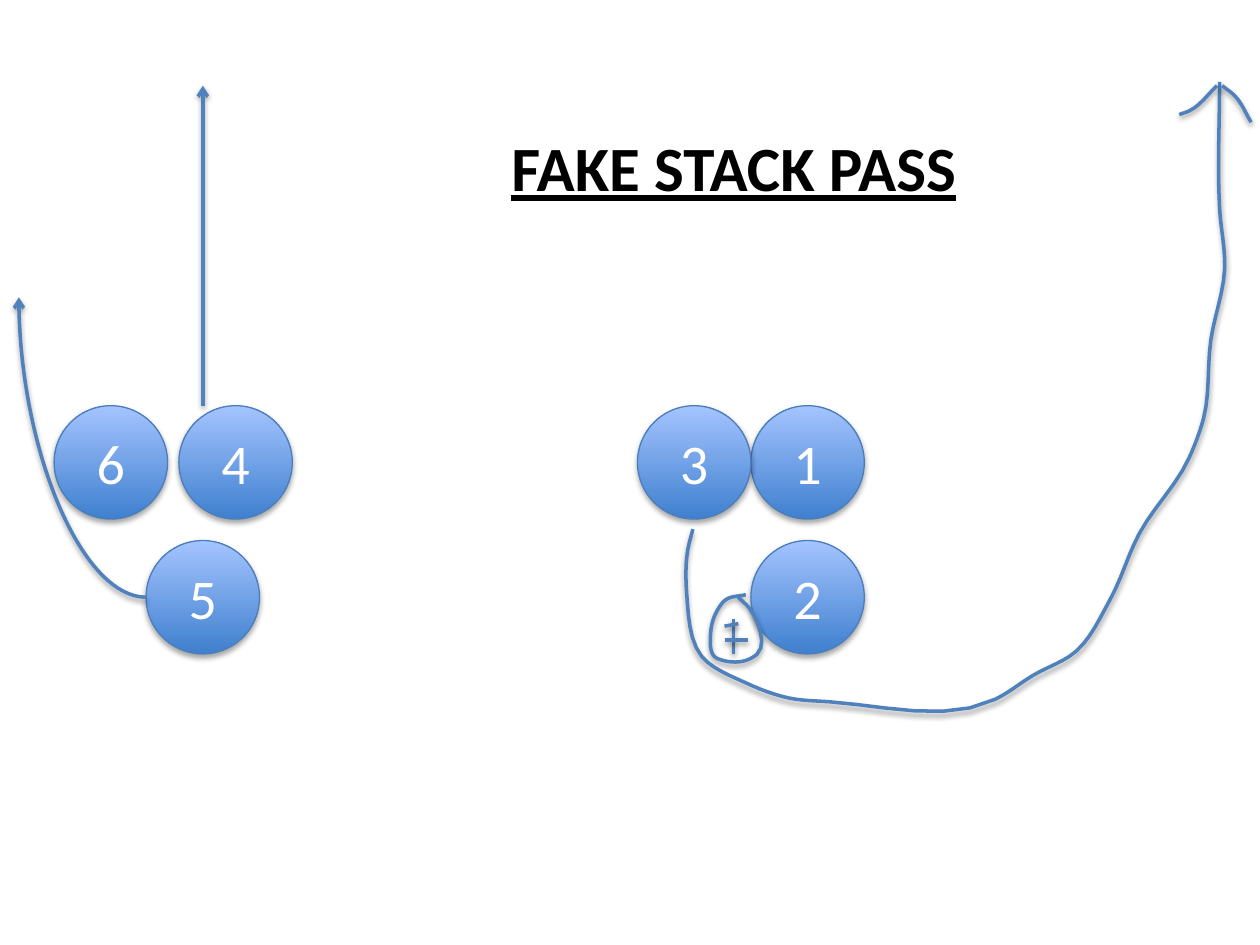
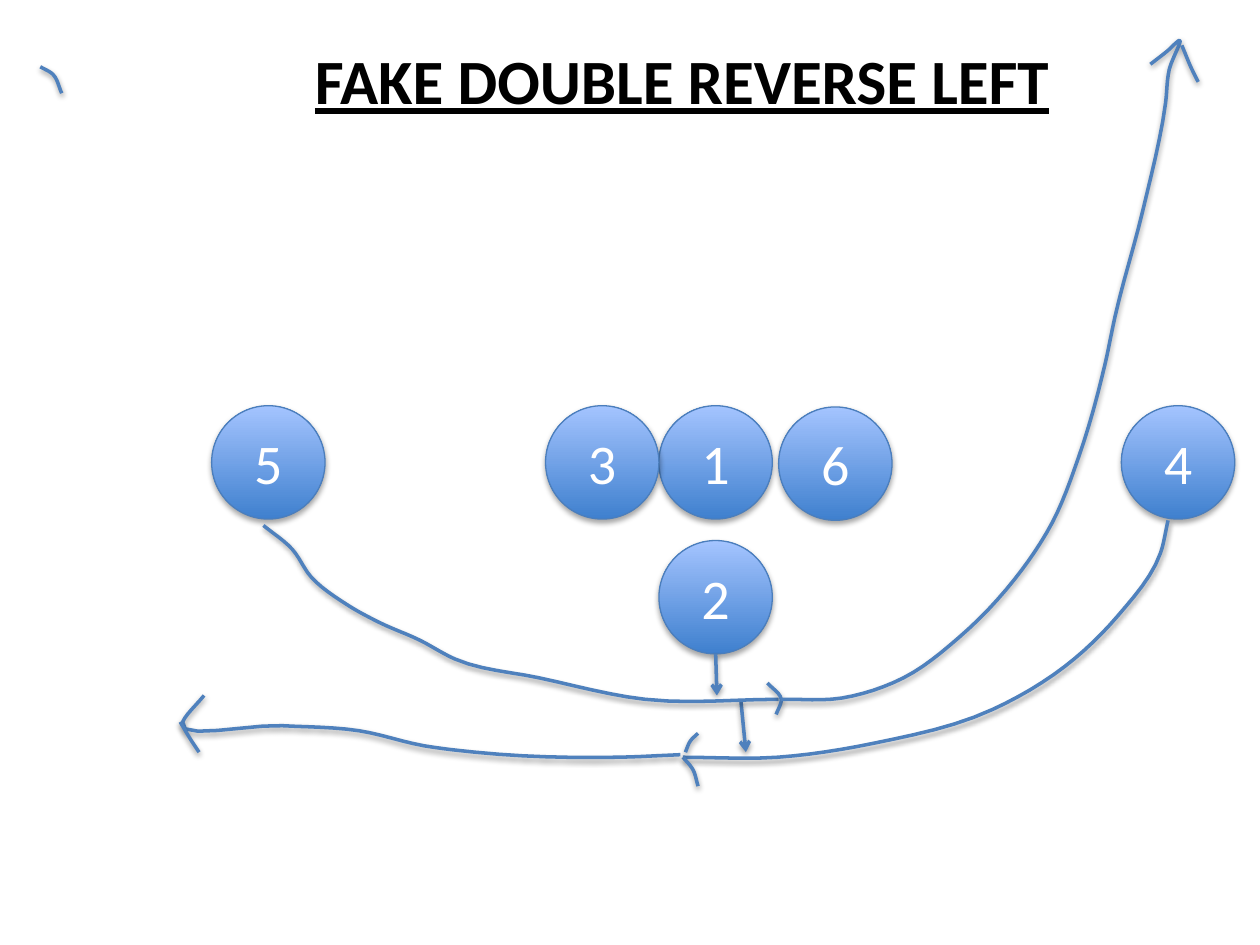
"""Builds two playbook slides with numbered players and their running routes."""
from lxml.etree import SubElement
from pptx import Presentation
from pptx.dml.color import RGBColor
from pptx.enum.shapes import MSO_CONNECTOR, MSO_SHAPE
from pptx.enum.text import MSO_AUTO_SIZE, PP_ALIGN
from pptx.oxml.ns import qn
from pptx.util import Inches, Pt

FONT = "Calibri"
BLACK = RGBColor(0x00, 0x00, 0x00)
WHITE = RGBColor(0xFF, 0xFF, 0xFF)
ROUTE = RGBColor(0x4F, 0x81, 0xBD)
RIM = RGBColor(0x4B, 0x7E, 0xBC)
DARK_BLUE = RGBColor(0x3F, 0x80, 0xCE)
LIGHT_BLUE = RGBColor(0xA4, 0xC4, 0xFF)

DIAMETER = 0.9
LINE_ROW, BACK_ROW = 3.22, 4.29
STEPS = 6

PLAYS = [
    {
        "title": ("FAKE STACK PASS", 3.96, 0.97, 3.88),
        "players": [
            ("1", 5.96, LINE_ROW), ("2", 5.96, BACK_ROW), ("4", 1.42, LINE_ROW),
            ("5", 1.16, BACK_ROW), ("3", 5.06, LINE_ROW), ("6", 0.43, LINE_ROW),
        ],
        "arrows": [((1.61, 3.22), (1.61, 0.68))],
        "curved_arrows": [((1.16, 4.74), (0.15, 2.36))],
        "strokes": [
            ((5.82, 4.91), (5.82, 5.19)),
            ((5.75, 4.97), (5.86, 4.95)),
            ((5.75, 5.08), (5.94, 5.08)),
        ],
        "routes": {
            "ball": [(5.92, 4.72), (5.76, 4.76), (5.69, 4.85), (5.64, 5.03), (5.67, 5.21),
                     (5.78, 5.25), (5.95, 5.23), (6.01, 5.19), (5.95, 4.83), (5.86, 4.74)],
            "sweep by 3": [(5.5, 4.2), (5.46, 4.36), (5.45, 4.7), (5.57, 5.21), (5.92, 5.42),
                           (6.26, 5.54), (6.58, 5.57), (7.9, 5.55), (8.2, 5.36), (8.54, 5.17),
                           (8.81, 4.76), (9.04, 4.24), (9.44, 3.63), (9.55, 3.33),
                           (9.61, 2.7), (9.72, 2.13), (9.68, 1.66), (9.68, 0.65)],
            "sweep head left": [(9.66, 0.68), (9.44, 0.88), (9.36, 0.91)],
            "sweep head right": [(9.7, 0.68), (9.8, 0.76), (9.93, 0.97)],
        },
    },
    {
        "title": ("FAKE DOUBLE REVERSE LEFT", 2.4, 0.28, 6.12),
        "players": [
            ("1", 5.23, LINE_ROW), ("2", 5.23, BACK_ROW), ("4", 8.9, LINE_ROW),
            ("5", 1.68, LINE_ROW), ("3", 4.33, LINE_ROW), ("6", 6.18, 3.23),
        ],
        "arrows": [((5.68, 5.19), (5.69, 5.52)), ((5.88, 5.56), (5.92, 5.97))],
        "curved_arrows": [],
        "strokes": [],
        "routes": {
            "run by 5": [(2.09, 4.17), (2.32, 4.36), (2.47, 4.58), (2.74, 4.79), (3.01, 4.94),
                         (3.33, 5.08), (3.61, 5.23), (4.28, 5.38), (5.12, 5.55), (6.18, 5.55)],
            "run by 5 head": [(6.09, 5.42), (6.2, 5.55), (6.16, 5.67)],
            "reverse by 4": [(9.27, 4.13), (9.21, 4.39), (8.87, 4.89), (8.45, 5.29),
                             (7.88, 5.63), (6.93, 5.9), (6.17, 6.01), (5.42, 6.01)],
            "reverse head top": [(5.44, 5.97), (5.48, 5.88), (5.54, 5.82)],
            "reverse head bottom": [(5.42, 6.01), (5.5, 6.11), (5.54, 6.24)],
            "corner mark": [(0.32, 0.53), (0.42, 0.59), (0.49, 0.74)],
            "deep run": [(6.2, 5.55), (6.68, 5.54), (7.17, 5.38), (7.61, 5.06), (8.05, 4.6),
                         (8.35, 4.15), (8.56, 3.63), (8.77, 2.89), (8.85, 2.51), (9.07, 1.67),
                         (9.25, 0.82), (9.28, 0.55), (9.36, 0.32), (9.27, 0.4), (9.13, 0.51)],
            "deep run head": [(9.38, 0.36), (9.46, 0.55), (9.51, 0.65)],
            "reverse finish": [(5.4, 5.99), (4.91, 6.01), (3.77, 5.97), (3.37, 5.92),
                               (2.85, 5.8), (2.24, 5.76), (1.45, 5.73), (1.62, 5.52)],
            "reverse finish head": [(1.43, 5.73), (1.52, 5.88), (1.58, 5.97)],
        },
    },
]


def add_shadow(shape, distance, opacity):
    effects = SubElement(shape._element.spPr, qn("a:effectLst"))
    shadow = SubElement(effects, qn("a:outerShdw"), blurRad="40000", dist=str(distance),
                        dir="5400000", rotWithShape="0")
    color = SubElement(shadow, qn("a:srgbClr"), val="000000")
    SubElement(color, qn("a:alpha"), val=str(opacity * 1000))


def style_route(shape, arrow=False):
    shape.line.color.rgb = ROUTE
    shape.line.width = Pt(2)
    if arrow:
        SubElement(shape.line._get_or_add_ln(), qn("a:tailEnd"), type="arrow")
    add_shadow(shape, 20000, 38)


def add_line(slide, start, end, kind=MSO_CONNECTOR.STRAIGHT, arrow=True):
    line = slide.shapes.add_connector(kind, *map(Inches, start + end))
    if kind == MSO_CONNECTOR.CURVE:
        line._element.spPr.find(qn("a:prstGeom")).set("prst", "curvedConnector2")
    style_route(line, arrow)


def distance(a, b):
    return ((a[0] - b[0]) ** 2 + (a[1] - b[1]) ** 2) ** 0.5


def tangent(before, point, after):
    d1, d2 = distance(before, point), distance(point, after)
    if not d1 or not d2:
        return tuple((c - a) / (d1 + d2) for a, c in zip(before, after))
    return tuple(((b - a) / d1 * d2 + (c - b) / d2 * d1) / (d1 + d2)
                 for a, b, c in zip(before, point, after))


def smooth(points):
    """Returns points on a Hermite curve through the given points."""
    padded = [points[0], *points, points[-1]]
    slopes = [tangent(*trio) for trio in zip(padded, padded[1:], padded[2:])]
    curve = [points[0]]
    for a, b, m, n in zip(points, points[1:], slopes, slopes[1:]):
        length = distance(a, b)
        for step in range(1, STEPS + 1):
            t = step / STEPS
            ease = t * t * (3 - 2 * t)
            leave = t * (1 - t) ** 2 * length
            arrive = t * t * (t - 1) * length
            curve.append(tuple(p + (q - p) * ease + u * leave + v * arrive
                               for p, q, u, v in zip(a, b, m, n)))
    return curve


def add_route(slide, points):
    start, *rest = [(Inches(x), Inches(y)) for x, y in smooth(points)]
    builder = slide.shapes.build_freeform(*start)
    builder.add_line_segments(rest, close=False)
    sp = builder.convert_to_shape()
    sp.fill.background()
    style_route(sp)


def format_run(run, size, color):
    run.font.name = FONT
    run.font.size = Pt(size)
    run.font.color.rgb = color


def add_player(slide, number, left, top):
    sp = slide.shapes.add_shape(MSO_SHAPE.OVAL, *map(Inches, (left, top, DIAMETER, DIAMETER)))
    sp.fill.gradient()
    sp.fill.gradient_angle = 90
    for stop, color in zip(sp.fill.gradient_stops, (DARK_BLUE, LIGHT_BLUE)):
        stop.color.rgb = color
    sp.line.color.rgb = RIM
    sp.line.width = Pt(0.75)
    add_shadow(sp, 23000, 35)
    p = sp.text_frame.paragraphs[0]
    p.text = number
    p.alignment = PP_ALIGN.CENTER
    format_run(p.runs[0], 32, WHITE)


def add_title(slide, text, left, top, width):
    tf = slide.shapes.add_textbox(*map(Inches, (left, top, width, 0.71))).text_frame
    tf.word_wrap = False
    tf.auto_size = MSO_AUTO_SIZE.SHAPE_TO_FIT_TEXT
    tf.text = text
    r = tf.paragraphs[0].runs[0]
    format_run(r, 36, BLACK)
    r.font.bold = r.font.underline = True


def add_play(prs, play):
    slide = prs.slides.add_slide(prs.slide_layouts[6])
    *players, last_player = play["players"]
    for player in players:
        add_player(slide, *player)
    add_title(slide, *play["title"])
    for start, end in play["arrows"]:
        add_line(slide, start, end)
    for start, end in play["curved_arrows"]:
        add_line(slide, start, end, MSO_CONNECTOR.CURVE)
    for start, end in play["strokes"]:
        add_line(slide, start, end, arrow=False)
    for points in play["routes"].values():
        add_route(slide, points)
    add_player(slide, *last_player)


def main():
    prs = Presentation()
    prs.slide_width, prs.slide_height = Inches(10), Inches(7.5)
    for play in PLAYS:
        add_play(prs, play)
    prs.save("out.pptx")


if __name__ == "__main__":
    main()
